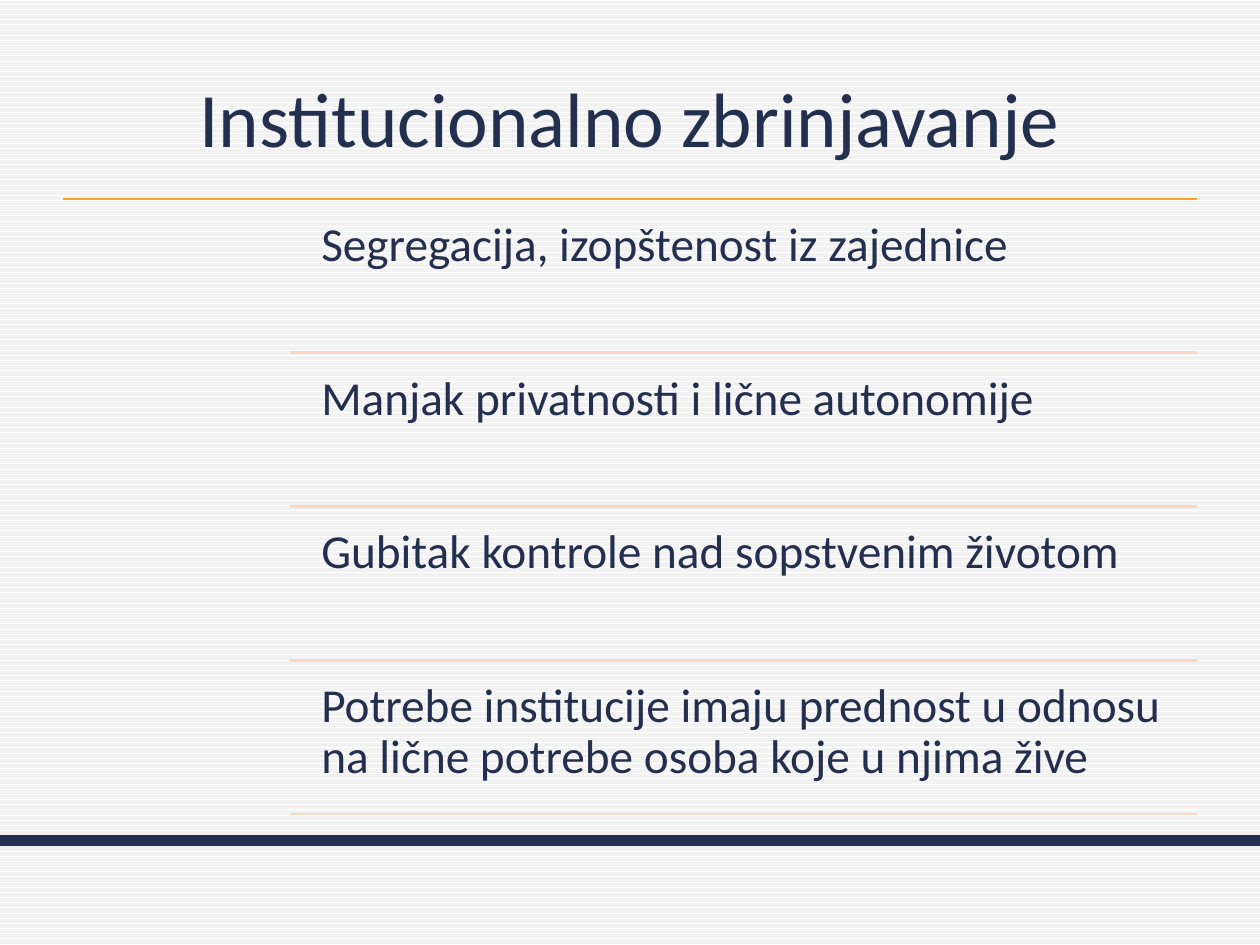
import dataclasses

import pptx
import pptx.dml.color
import pptx.enum.dml
import pptx.enum.shapes
import pptx.enum.text
import pptx.oxml
import pptx.oxml.ns
import pptx.util


def rgb(value):
    return pptx.dml.color.RGBColor.from_string(value)


@dataclasses.dataclass(frozen=True)
class Theme:
    font: str = "Calibri"
    ink: str = "232F4E"
    accent: str = "FDA023"
    divider: str = "FED6BD"
    stripe: str = "F2F2F2"
    paper: str = "FFFFFF"
    title_size: float = 44
    item_size: float = 27
    rule_width: float = 1.5
    band_width: float = 6


def write(box, text, *, size, color, font, align=None, anchor=None, inset=None, spacing=None):
    frame = box.text_frame
    frame.word_wrap = True
    frame.auto_size = pptx.enum.text.MSO_AUTO_SIZE.NONE
    frame.vertical_anchor = anchor
    if inset is not None:
        frame.margin_left = frame.margin_right = pptx.util.Inches(inset)
        frame.margin_top = frame.margin_bottom = pptx.util.Inches(inset)
    para = frame.paragraphs[0]
    para.alignment = align
    para.line_spacing = spacing
    span = para.add_run()
    span.text = text
    span.font.name = font
    span.font.size = pptx.util.Pt(size)
    span.font.color.rgb = rgb(color)


class SlideBuilder:
    """Places elements on one slide; all lengths are shares of its width and height."""

    def __init__(self, deck, theme):
        self.deck = deck
        self.theme = theme
        self.page = deck.slides.add_slide(deck.slide_layouts[5])

    def across(self, share):
        return round(self.deck.slide_width * share)

    def down(self, share):
        return round(self.deck.slide_height * share)

    def background(self):
        fill = self.page.background.fill
        fill.patterned()
        fill.pattern = pptx.enum.dml.MSO_PATTERN.DARK_HORIZONTAL
        fill.fore_color.rgb = rgb(self.theme.stripe)
        fill.back_color.rgb = rgb(self.theme.paper)

    def title(self, text, left, top, width, height):
        box = self.page.shapes.title
        box.left, box.top = self.across(left), self.down(top)
        box.width, box.height = self.across(width), self.down(height)
        write(box, text, size=self.theme.title_size, color=self.theme.ink,
              font=self.theme.font, align=pptx.enum.text.PP_ALIGN.CENTER,
              anchor=pptx.enum.text.MSO_ANCHOR.MIDDLE)

    def item(self, text, left, top, width, height):
        box = self.page.shapes.add_textbox(
            self.across(left), self.down(top), self.across(width), self.down(height))
        write(box, text, size=self.theme.item_size, color=self.theme.ink,
              font=self.theme.font, anchor=pptx.enum.text.MSO_ANCHOR.TOP,
              inset=0.11, spacing=0.9)

    def rule(self, left, right, level, color, width):
        line = self.page.shapes.add_connector(
            pptx.enum.shapes.MSO_CONNECTOR.STRAIGHT,
            self.across(left), self.down(level), self.across(right), self.down(level))
        line.line.color.rgb = rgb(color)
        line.line.width = pptx.util.Pt(width)
        properties = line._element.spPr
        properties.append(pptx.oxml.parse_xml(
            f"<a:effectLst {pptx.oxml.ns.nsdecls('a')}/>"))


ITEMS = (
    "Segregacija, izopštenost iz zajednice",
    "Manjak privatnosti i lične autonomije",
    "Gubitak kontrole nad sopstvenim životom",
    "Potrebe institucije imaju prednost u odnosu na lične potrebe osoba koje u njima žive",
)


def main():
    deck = pptx.Presentation()
    deck.slide_width = pptx.util.Inches(10)
    deck.slide_height = pptx.util.Inches(7.5)
    theme = Theme()
    slide = SlideBuilder(deck, theme)

    slide.background()
    slide.title("Institucionalno zbrinjavanje", 0.05, 0.04, 0.9, 1 / 6)
    slide.rule(0, 1, 6.67 / 7.5, theme.ink, theme.band_width)

    list_top, row, gap = 1.58 / 7.5, 1.22 / 7.5, 0.06 / 7.5
    slide.rule(0.05, 0.95, list_top, theme.accent, theme.rule_width)
    for index, text in enumerate(ITEMS):
        top = list_top + index * row
        slide.item(text, 0.244, top + gap, 0.707, row - gap)
        slide.rule(0.23, 0.95, top + row, theme.divider, theme.rule_width)

    deck.save("out.pptx")


if __name__ == "__main__":
    main()
